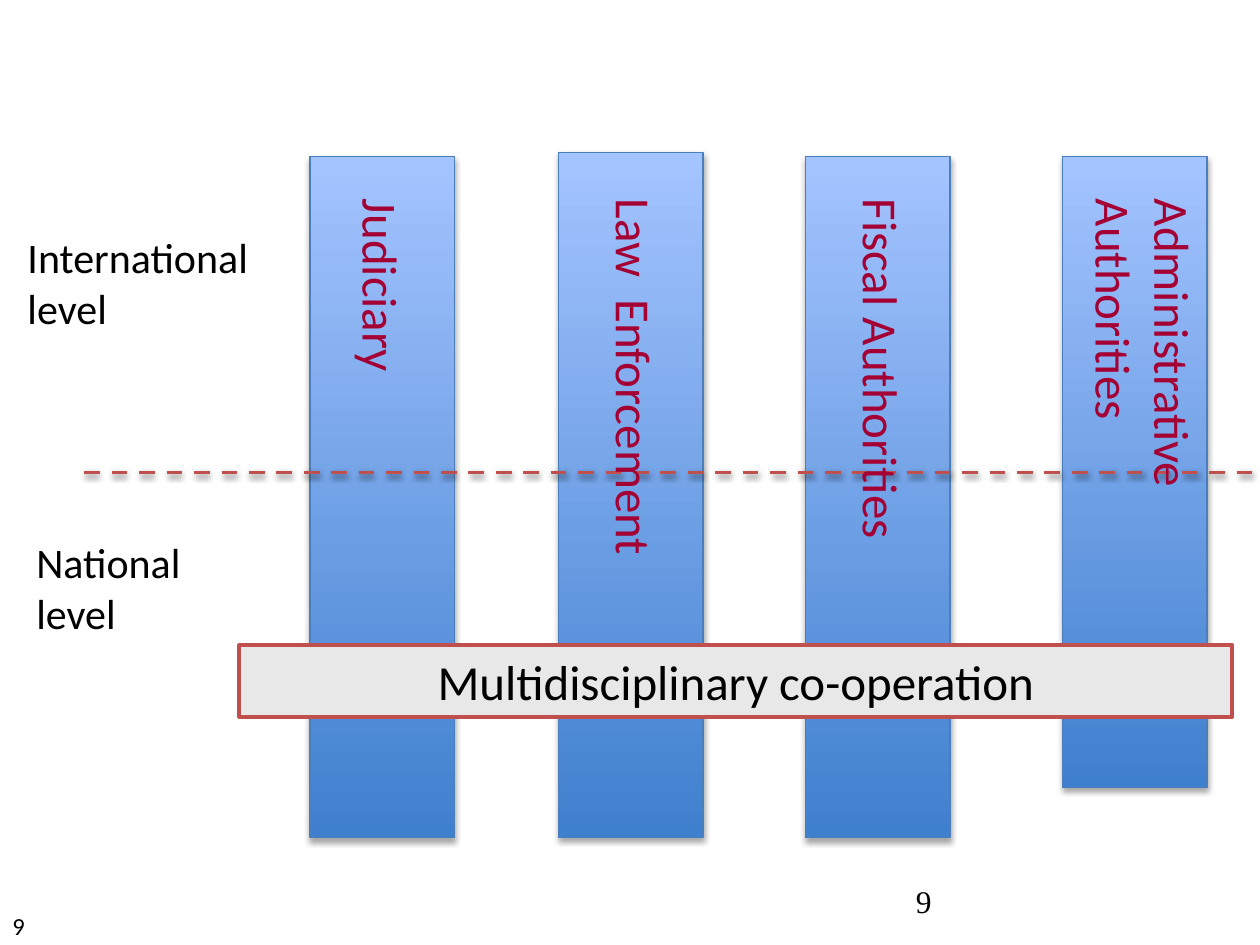
from lxml import etree
from pptx import Presentation
from pptx.dml.color import RGBColor
from pptx.enum import dml, shapes, text
from pptx.oxml.ns import qn
from pptx.util import Inches, Pt

BLACK = RGBColor(0x00, 0x00, 0x00)
CRIMSON = RGBColor(0xA5, 0x00, 0x33)
RED = RGBColor(0xC0, 0x50, 0x4D)
GREY = RGBColor(0xE8, 0xE8, 0xE8)
EDGE = RGBColor(0x4B, 0x7E, 0xBC)
DEEP_BLUE = RGBColor(0x3F, 0x80, 0xCE)
PALE_BLUE = RGBColor(0xA4, 0xC4, 0xFF)

# Pillars: left, top, bottom
PILLARS = [(2.46, 1.24, 6.65), (6.39, 1.24, 6.65), (4.43, 1.21, 6.65), (8.43, 1.24, 6.25)]
PILLAR_W = 1.15

# Vertical labels: text, centre x, length, thickness
LABELS = [
    ("Judiciary", 3.03, 3.9, 0.57),
    ("Law  Enforcement", 5.04, 3.18, 0.57),
    ("Fiscal Authorities", 7.0, 3.18, 0.57),
    ("Administrative Authorities", 9.08, 2.73, 1.04),
]
LABEL_TOP = 1.48

# Horizontal texts: lines, box, font values
LEVEL = dict(size=Pt(24), name="Calibri")
TEXTS = [
    (["9"], (0, 7.18, 0.68, 0.34), dict(size=Pt(14), name="Calibri")),
    (["9"], (7.17, 6.95, 2.33, 0.4), dict(size=Pt(18), name="Times New Roman")),
    (["National", "level"], (0.19, 4.21, 1.74, 0.91), LEVEL),
    (["International", "level"], (0.12, 1.79, 2.43, 0.91), LEVEL),
]
DIVIDER = (0.67, 3.75, 9.99, 3.75)
BANNER = ("Multidisciplinary co-operation", (1.9, 5.12, 7.88, 0.57))


def inches(values):
    return [Inches(v) for v in values]


def write(shape, lines, font, color=BLACK, align=text.PP_ALIGN.LEFT):
    tf = shape.text_frame
    tf.word_wrap = True
    for i, line in enumerate(lines):
        p = tf.paragraphs[0] if i == 0 else tf.add_paragraph()
        p.alignment = align
        r = p.add_run()
        r.text = line
        for key, value in font.items():
            setattr(r.font, key, value)
        r.font.color.rgb = color


def outline(shape, color, width):
    shape.line.color.rgb = color
    shape.line.width = Pt(width)


def add_shadow(shape, alpha, blur, dist):
    effects = etree.SubElement(shape._element.spPr, qn("a:effectLst"))
    shadow = etree.SubElement(effects, qn("a:outerShdw"), blurRad=str(Pt(blur)),
                              dist=str(Pt(dist)), dir="5400000", rotWithShape="0")
    color = etree.SubElement(shadow, qn("a:srgbClr"), val=str(BLACK))
    etree.SubElement(color, qn("a:alpha"), val=str(alpha * 1000))


prs = Presentation()
prs.slide_width, prs.slide_height = Inches(10), Inches(7.5)
s = prs.slides.add_slide(prs.slide_layouts[6])

# Pillars
for left, top, bottom in PILLARS:
    sp = s.shapes.add_shape(shapes.MSO_SHAPE.RECTANGLE,
                            *inches((left, top, PILLAR_W, bottom - top)))
    sp.fill.gradient()
    sp.fill.gradient_angle = 90
    for stop, position, color in zip(sp.fill.gradient_stops, (0, 1), (DEEP_BLUE, PALE_BLUE)):
        stop.position = position
        stop.color.rgb = color
    outline(sp, EDGE, 0.75)
    add_shadow(sp, 35, 3.1, 1.8)

# Divider between the levels
line = s.shapes.add_connector(shapes.MSO_CONNECTOR.STRAIGHT, *inches(DIVIDER))
outline(line, RED, 2.25)
line.line.dash_style = dml.MSO_LINE.DASH
add_shadow(line, 38, 3.1, 1.6)

# Level names and page numbers
for lines, box, font in TEXTS:
    write(s.shapes.add_textbox(*inches(box)), lines, font)

# Pillar labels, turned about their centres
for label, centre, length, thick in LABELS:
    middle = LABEL_TOP + length / 2
    box = (centre - length / 2, middle - thick / 2, length, thick)
    tb = s.shapes.add_textbox(*inches(box))
    tb.rotation = 90
    write(tb, [label], dict(size=Pt(28), name="Calibri"), CRIMSON)

# Co-operation banner
caption, box = BANNER
banner = s.shapes.add_shape(shapes.MSO_SHAPE.RECTANGLE, *inches(box))
banner.shadow.inherit = False
banner.fill.solid()
banner.fill.fore_color.rgb = GREY
outline(banner, RED, 2.25)
write(banner, [caption], dict(size=Pt(28), name="Calibri"), align=text.PP_ALIGN.CENTER)

prs.save("out.pptx")
